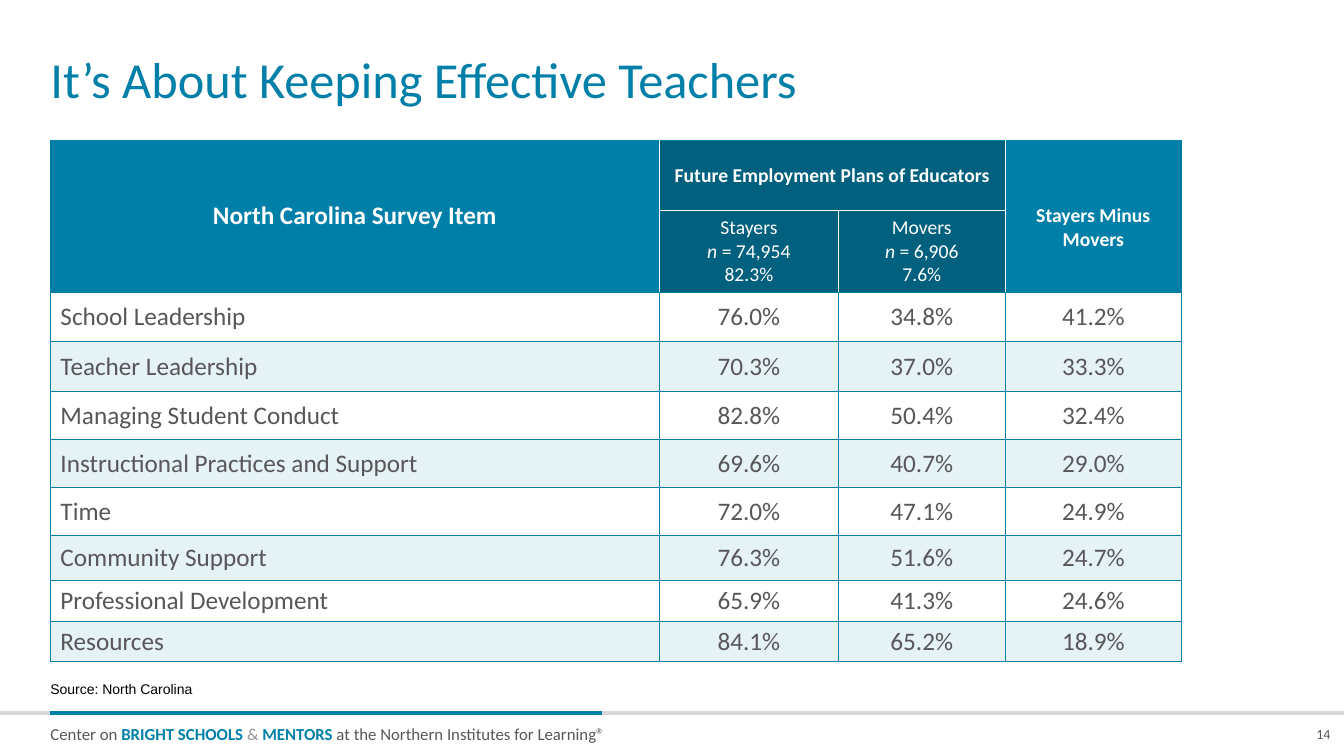
"""Build the slide on keeping effective teachers."""
from lxml.etree import SubElement
from pptx import Presentation
from pptx.dml.color import RGBColor
from pptx.enum.shapes import MSO_CONNECTOR
from pptx.enum.text import MSO_ANCHOR as ANCHOR, MSO_AUTO_SIZE as AUTO, PP_ALIGN as ALIGN
from pptx.oxml.ns import qn
from pptx.util import Pt

TEAL = RGBColor(0x00, 0x80, 0xA8)
DARK_TEAL = RGBColor(0x00, 0x60, 0x7E)
PALE_TEAL = RGBColor(0xE5, 0xF2, 0xF6)
WHITE = RGBColor(0xFF, 0xFF, 0xFF)
BLACK = RGBColor(0, 0, 0)
GREY = RGBColor(0x59, 0x56, 0x5A)
MID_GREY = RGBColor(0x93, 0x95, 0x98)
LIGHT_GREY = RGBColor(0xD9, 0xD9, 0xD9)

LEFT = 36
RULE_Y = 509.2
COL_WIDTHS = (435, 128, 119, 126)
ROW_HEIGHTS = (50.2, 58.2, 35.4, 35.8, 34.4, 33.8, 34.8, 31.6, 29.2, 29.2)

SURVEY = (
    ("School Leadership", "76.0%", "34.8%", "41.2%"),
    ("Teacher Leadership", "70.3%", "37.0%", "33.3%"),
    ("Managing Student Conduct", "82.8%", "50.4%", "32.4%"),
    ("Instructional Practices and Support", "69.6%", "40.7%", "29.0%"),
    ("Time", "72.0%", "47.1%", "24.9%"),
    ("Community Support", "76.3%", "51.6%", "24.7%"),
    ("Professional Development", "65.9%", "41.3%", "24.6%"),
    ("Resources", "84.1%", "65.2%", "18.9%"),
)


def set_attrs(obj, values):
    for name, value in values.items():
        setattr(obj, name, value)


def fill_text(tf, paragraphs, size, color, font="Calibri", bold=False, **para_format):
    for i, runs in enumerate(paragraphs):
        p = tf.paragraphs[0] if i == 0 else tf.add_paragraph()
        set_attrs(p, para_format)
        for text, extra in runs:
            r = p.add_run()
            r.text = text
            fmt = {"name": font, "size": Pt(size), "bold": bold, **extra}
            r.font.color.rgb = fmt.pop("color", color)
            set_attrs(r.font, fmt)


def frame(sp, anchor, wrap=True):
    tf = sp.text_frame
    set_attrs(tf, {"margin_left": 0, "margin_top": 0, "margin_right": 0, "margin_bottom": 0,
                   "auto_size": AUTO.NONE, "word_wrap": wrap, "vertical_anchor": anchor})
    return tf


def add_title(slide, text):
    sp = slide.shapes.title
    set_attrs(sp, {"left": Pt(LEFT), "top": 0, "width": Pt(893), "height": Pt(78.5)})
    fill_text(frame(sp, ANCHOR.BOTTOM), [[(text, {})]], 36, TEAL,
              alignment=ALIGN.LEFT, line_spacing=0.9)


def add_text(slide, x, y, w, h, runs, size, color, anchor=ANCHOR.BOTTOM, wrap=True, **style):
    sp = slide.shapes.add_textbox(Pt(x), Pt(y), Pt(w), Pt(h))
    fill_text(frame(sp, anchor, wrap), [runs], size, color, **style)


def add_rule(slide, x1, x2, color):
    line = slide.shapes.add_connector(MSO_CONNECTOR.STRAIGHT,
                                      Pt(x1), Pt(RULE_Y), Pt(x2), Pt(RULE_Y))
    line.line.color.rgb = color
    line.line.width = Pt(3)
    SubElement(line._element.spPr, qn("a:effectLst"))


def format_cell(cell, fill, white_sides=""):
    tc_pr = cell._tc.get_or_add_tcPr()
    for side in "LRTB":
        ln = SubElement(tc_pr, qn(f"a:ln{side}"), w=str(Pt(0.75)))
        solid = SubElement(ln, qn("a:solidFill"))
        SubElement(solid, qn("a:srgbClr"), val=str(WHITE if side in white_sides else TEAL))
    cell.fill.solid()
    cell.fill.fore_color.rgb = fill
    cell.vertical_anchor = ANCHOR.MIDDLE


def group_heading(name, count, share):
    return [[(name, {})], [("n", {"italic": True}), (f" = {count}", {})], [(share, {})]]


def fill_header(table):
    for (r1, c1), (r2, c2) in (((0, 0), (1, 0)), ((0, 1), (0, 2)), ((0, 3), (1, 3))):
        table.cell(r1, c1).merge(table.cell(r2, c2))
    headings = (
        (0, 0, [[("North Carolina Survey Item", {})]], 18, True),
        (0, 1, [[("Future Employment Plans of Educators", {})]], 14, True),
        (0, 3, [[("Stayers Minus", {})], [("Movers", {})]], 14, True),
        (1, 1, group_heading("Stayers", "74,954", "82.3%"), 14, False),
        (1, 2, group_heading("Movers", "6,906", "7.6%"), 14, False),
    )
    for row, white_sides in enumerate(("LRB", "LRT")):
        for col, (fill, sides) in enumerate(((TEAL, "R"), (DARK_TEAL, white_sides),
                                             (DARK_TEAL, white_sides), (TEAL, "L"))):
            format_cell(table.cell(row, col), fill, sides)
    for row, col, paragraphs, size, bold in headings:
        fill_text(table.cell(row, col).text_frame, paragraphs, size, WHITE,
                  bold=bold, alignment=ALIGN.CENTER)
    table.cell(0, 3).margin_top = Pt(20.6)


def add_survey_table(slide):
    gf = slide.shapes.add_table(len(ROW_HEIGHTS), len(COL_WIDTHS), Pt(LEFT), Pt(100.2),
                                Pt(sum(COL_WIDTHS)), Pt(sum(ROW_HEIGHTS)))
    table = gf.table
    table.horz_banding = False
    for column, width in zip(table.columns, COL_WIDTHS):
        column.width = Pt(width)
    for row, height in zip(table.rows, ROW_HEIGHTS):
        row.height = Pt(height)
    fill_header(table)
    for i, values in enumerate(SURVEY):
        for col, value in enumerate(values):
            cell = table.cell(i + 2, col)
            format_cell(cell, PALE_TEAL if i % 2 else WHITE)
            fill_text(cell.text_frame, [[(value, {})]], 18, GREY,
                      alignment=ALIGN.CENTER if col else ALIGN.LEFT)


def main():
    prs = Presentation()
    prs.slide_width, prs.slide_height = Pt(960), Pt(540)
    slide = prs.slides.add_slide(prs.slide_layouts[5])
    strong = {"bold": True, "color": TEAL}
    add_rule(slide, 0, 960, LIGHT_GREY)
    add_rule(slide, LEFT, 430, TEAL)
    add_text(slide, LEFT, 513.4, 394, 16.6,
             [("Center on ", {}), ("BRIGHT SCHOOLS ", strong), ("& ", {"color": MID_GREY}),
              ("MENTORS", strong), (" at the Northern Institutes for Learning®", {})],
             12, GREY, anchor=ANCHOR.TOP, wrap=False, line_spacing=1.25)
    add_title(slide, "It’s About Keeping Effective Teachers")
    add_text(slide, LEFT, 483, 893, 15.4, [("Source: North Carolina", {})], 10, BLACK,
             font="Arial")
    add_survey_table(slide)
    add_text(slide, 938, 518.4, 12.4, 12.2, [("14", {})], 10, GREY, wrap=False,
             alignment=ALIGN.RIGHT)
    prs.save("out.pptx")


if __name__ == "__main__":
    main()
